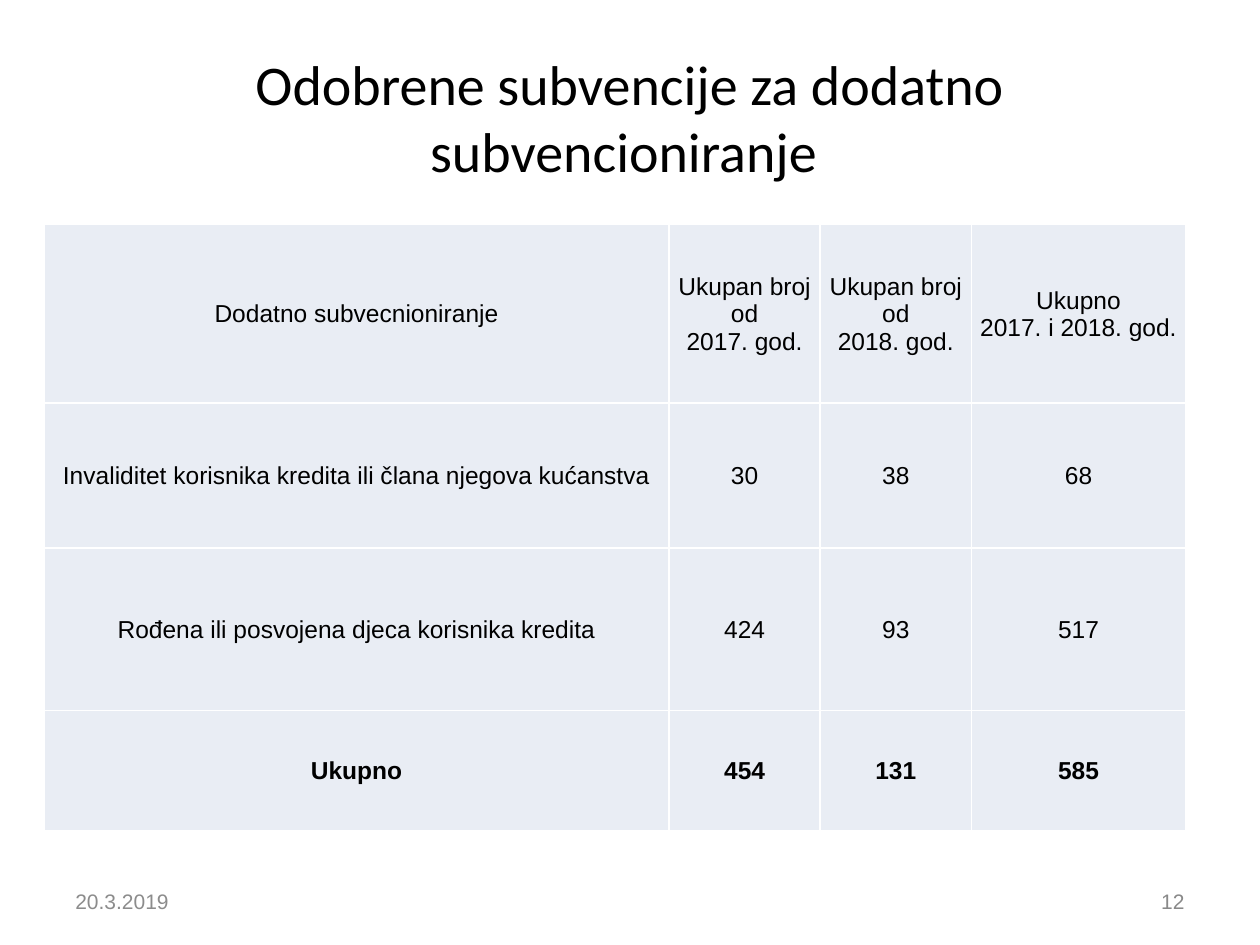
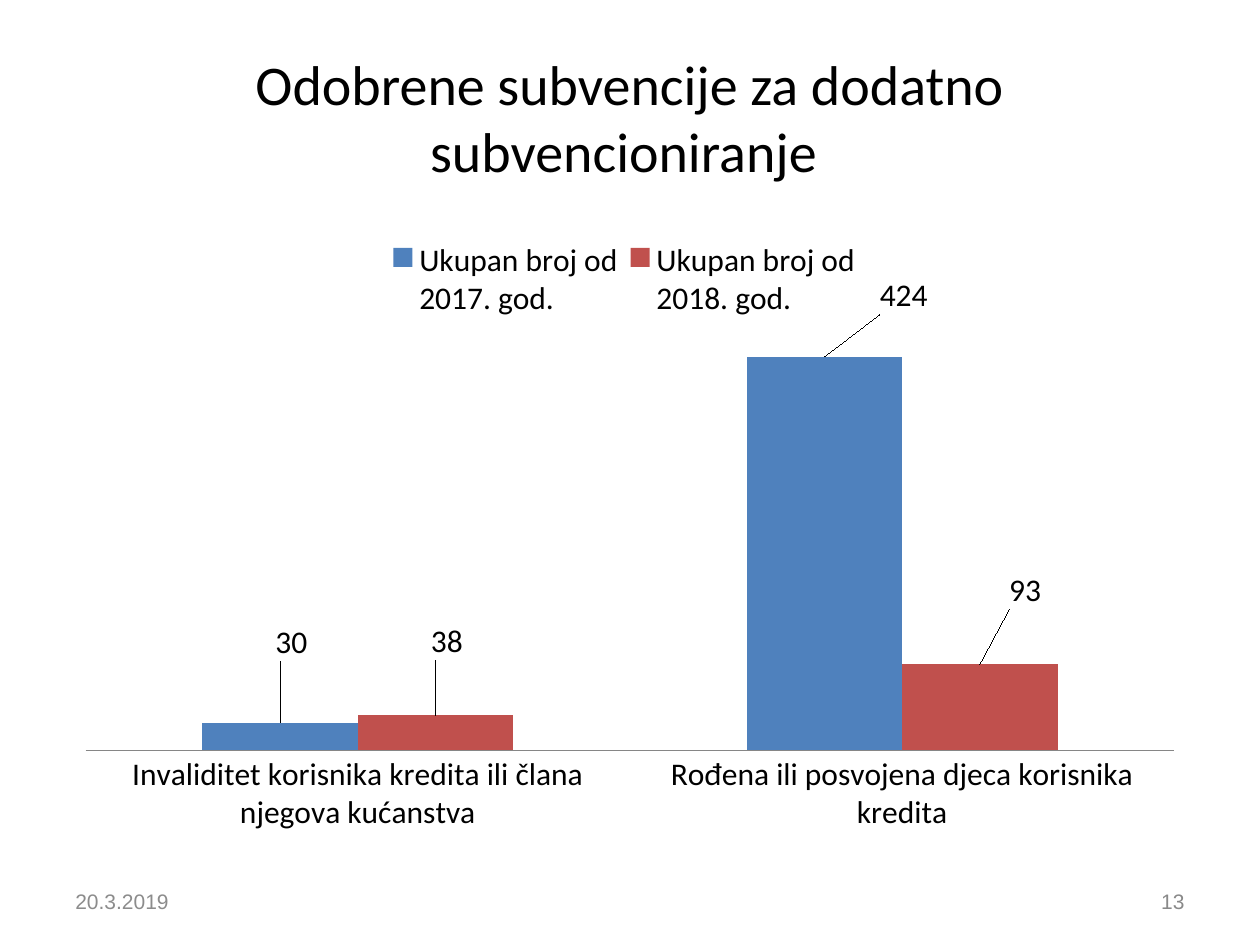
from copy import deepcopy
from dataclasses import dataclass

from lxml import etree
from pptx import Presentation
from pptx import util as u
from pptx.chart.data import CategoryChartData
from pptx.dml.color import RGBColor
from pptx.enum import chart as charts
from pptx.enum import text
from pptx.oxml.ns import qn


@dataclass(frozen=True)
class Theme:
    ink: str = "000000"
    date: str = "8C8C8C"
    number: str = "898989"
    cell: str = "E9EDF4"
    border: str = "FFFFFF"
    axis: str = "868686"
    series: tuple = ("4F81BD", "C0504D")
    heading_font: str = "Calibri"
    body_font: str = "Arial"
    title_size: int = 32
    chart_size: int = 18
    table_size: int = 14
    footer_size: int = 12


@dataclass(frozen=True)
class Box:
    """A place on the grid of 200 columns and 150 rows."""
    column: float
    row: float
    columns: float
    rows: float

    def lengths(self) -> list:
        return [grid(n) for n in (self.column, self.row, self.columns, self.rows)]


@dataclass(frozen=True)
class Share:
    """A place or an offset as shares of the chart's size."""
    x: float
    y: float
    w: float = 0
    h: float = 0


@dataclass(frozen=True)
class Subsidy:
    name: str
    counts: tuple


THEME = Theme()
GRID_STEP = 0.05
ALIGN = text.PP_ALIGN

TITLE = "Odobrene subvencije za dodatno subvencioniranje "
DATE = "20.3.2019"
YEARS = ("Ukupan broj od\n2017. god.", "Ukupan broj od\n2018. god.")
SUBSIDIES = (
    Subsidy("Invaliditet korisnika kredita ili člana njegova kućanstva", (30, 38)),
    Subsidy("Rođena ili posvojena djeca korisnika kredita", (424, 93)),
)

TITLE_BOX = Box(10, 6, 180, 25)
DATE_BOX = Box(10, 139, 46.6, 8)
NUMBER_BOX = Box(143.4, 139, 46.6, 8)
TABLE_BOX = Box(7, 35.6, 181.2, 96.2)
CHART_BOX = Box(10, 35, 180, 99)
TABLE_COLUMNS = (99.2, 24, 24, 34)
TABLE_ROWS = (28.4, 23, 25.8, 19)

PLOT_AREA = Share(0.02, 0.18, 0.96, 0.67)
LEGEND_AREA = Share(0.28, 0.03, 0.43, 0.13)
# Label offsets for each series, one for each subsidy
LABEL_OFFSETS = (
    (Share(0.01, -0.09), Share(0.07, -0.06)),
    (Share(0.01, -0.08), Share(0.04, -0.08)),
)


def grid(steps: float) -> int:
    return u.Inches(steps * GRID_STEP)


def rgb(value: str) -> RGBColor:
    return RGBColor.from_string(value)


def write(frame, content: str, *, size: int, font: str = THEME.body_font,
          color: str = THEME.ink, align=ALIGN.LEFT, bold: bool = False) -> None:
    frame.word_wrap = True
    paragraph = frame.paragraphs[0]
    paragraph.text = content
    paragraph.alignment = align
    for run in paragraph.runs:
        run.font.name = font
        run.font.size = u.Pt(size)
        run.font.bold = bold
        run.font.color.rgb = rgb(color)
    # Line breaks take the format of the text around them
    for line_break in paragraph._p.findall(qn("a:br")):
        line_break.append(deepcopy(paragraph.runs[0]._r.rPr))


def add_text(slide, box: Box, content: str, **style) -> None:
    frame = slide.shapes.add_textbox(*box.lengths()).text_frame
    frame.vertical_anchor = text.MSO_ANCHOR.MIDDLE
    write(frame, content, **style)


def add_base_slide(presentation, number: int):
    """Blank slide with the shared title and footer."""
    slide = presentation.slides.add_slide(presentation.slide_layouts[6])
    add_text(slide, TITLE_BOX, TITLE, size=THEME.title_size,
             font=THEME.heading_font, align=ALIGN.CENTER)
    add_text(slide, DATE_BOX, DATE, size=THEME.footer_size, color=THEME.date)
    add_text(slide, NUMBER_BOX, str(number), size=THEME.footer_size,
             color=THEME.number, align=ALIGN.RIGHT)
    return slide


def format_cell(cell) -> None:
    cell.vertical_anchor = text.MSO_ANCHOR.MIDDLE
    cell.margin_left = cell.margin_right = cell.margin_top = u.Inches(0.01)
    cell.margin_bottom = 0
    properties = cell._tc.get_or_add_tcPr()
    for side in ("a:lnL", "a:lnR", "a:lnT", "a:lnB"):
        line = etree.SubElement(properties, qn(side), w=str(u.Pt(1)))
        fill = etree.SubElement(line, qn("a:solidFill"))
        etree.SubElement(fill, qn("a:srgbClr"), val=THEME.border)
    cell.fill.solid()
    cell.fill.fore_color.rgb = rgb(THEME.cell)


def table_content() -> list:
    header = ("Dodatno subvecnioniranje", *YEARS, "Ukupno\n2017. i 2018. god.")
    body = [(s.name, *s.counts, sum(s.counts)) for s in SUBSIDIES]
    totals = [sum(column) for column in list(zip(*body))[1:]]
    return [header, *body, ("Ukupno", *totals)]


def add_subsidy_table(slide) -> None:
    content = table_content()
    table = slide.shapes.add_table(
        len(TABLE_ROWS), len(TABLE_COLUMNS), *TABLE_BOX.lengths()).table
    table.first_row = table.horz_banding = False
    for column, width in zip(table.columns, TABLE_COLUMNS):
        column.width = grid(width)
    for row, height, values in zip(table.rows, TABLE_ROWS, content):
        row.height = grid(height)
        for cell, value in zip(row.cells, values):
            format_cell(cell)
            write(cell.text_frame, str(value), size=THEME.table_size,
                  align=ALIGN.CENTER, bold=values is content[-1])


def manual_layout(share: Share, *, target: str = "", fixed: bool = True):
    """Chart layout: a fixed place, or an offset from the usual one."""
    layout = etree.Element(qn("c:layout"))
    manual = etree.SubElement(layout, qn("c:manualLayout"))
    settings = [("layoutTarget", target)] if target else []
    if fixed:
        settings += [("xMode", "edge"), ("yMode", "edge")]
    settings += [("x", share.x), ("y", share.y)]
    if fixed:
        settings += [("w", share.w), ("h", share.h)]
    for name, value in settings:
        etree.SubElement(manual, qn(f"c:{name}"), val=str(value))
    return layout


def place(element, layout, after: str = "") -> None:
    """Put a layout first, or after a named child, replacing any old one."""
    for old in element.findall(qn("c:layout")):
        element.remove(old)
    if after:
        element.find(qn(after)).addnext(layout)
    else:
        element.insert(0, layout)


def format_series(series, color: str, offsets: tuple) -> None:
    series.format.fill.solid()
    series.format.fill.fore_color.rgb = rgb(color)
    series.data_labels.show_value = True
    for index, offset in enumerate(offsets):
        label = series.points[index].data_label
        label.position = charts.XL_LABEL_POSITION.OUTSIDE_END
        place(label._dLbl, manual_layout(offset, fixed=False), "c:idx")


def add_subsidy_chart(slide) -> None:
    data = CategoryChartData()
    data.categories = [subsidy.name for subsidy in SUBSIDIES]
    for index, year in enumerate(YEARS):
        data.add_series(year, [subsidy.counts[index] for subsidy in SUBSIDIES])
    chart = slide.shapes.add_chart(
        charts.XL_CHART_TYPE.COLUMN_CLUSTERED, *CHART_BOX.lengths(), data).chart
    chart.has_title = False
    chart.font.name = THEME.heading_font
    chart.font.size = u.Pt(THEME.chart_size)
    chart.font.color.rgb = rgb(THEME.ink)

    # Columns and their labels
    plot = chart.plots[0]
    plot.gap_width = 150
    plot.overlap = 0
    plot.vary_by_categories = False
    for series, color, offsets in zip(plot.series, THEME.series, LABEL_OFFSETS):
        format_series(series, color, offsets)

    # Axes
    chart.category_axis.major_tick_mark = charts.XL_TICK_MARK.NONE
    chart.category_axis.format.line.color.rgb = rgb(THEME.axis)
    chart.value_axis.visible = False
    chart.value_axis.has_major_gridlines = False
    chart.value_axis.minimum_scale = 0
    chart.value_axis.maximum_scale = 450

    # Legend and plot places
    chart.has_legend = True
    chart.legend.position = charts.XL_LEGEND_POSITION.TOP
    chart.legend.include_in_layout = False
    place(chart.legend._element, manual_layout(LEGEND_AREA), "c:legendPos")
    place(chart._chartSpace.chart.plotArea,
          manual_layout(PLOT_AREA, target="inner"))


def main() -> None:
    presentation = Presentation()
    presentation.slide_width = grid(200)
    presentation.slide_height = grid(150)
    for number, add_content in enumerate((add_subsidy_table, add_subsidy_chart), 12):
        add_content(add_base_slide(presentation, number))
    presentation.save("out.pptx")


if __name__ == "__main__":
    main()
